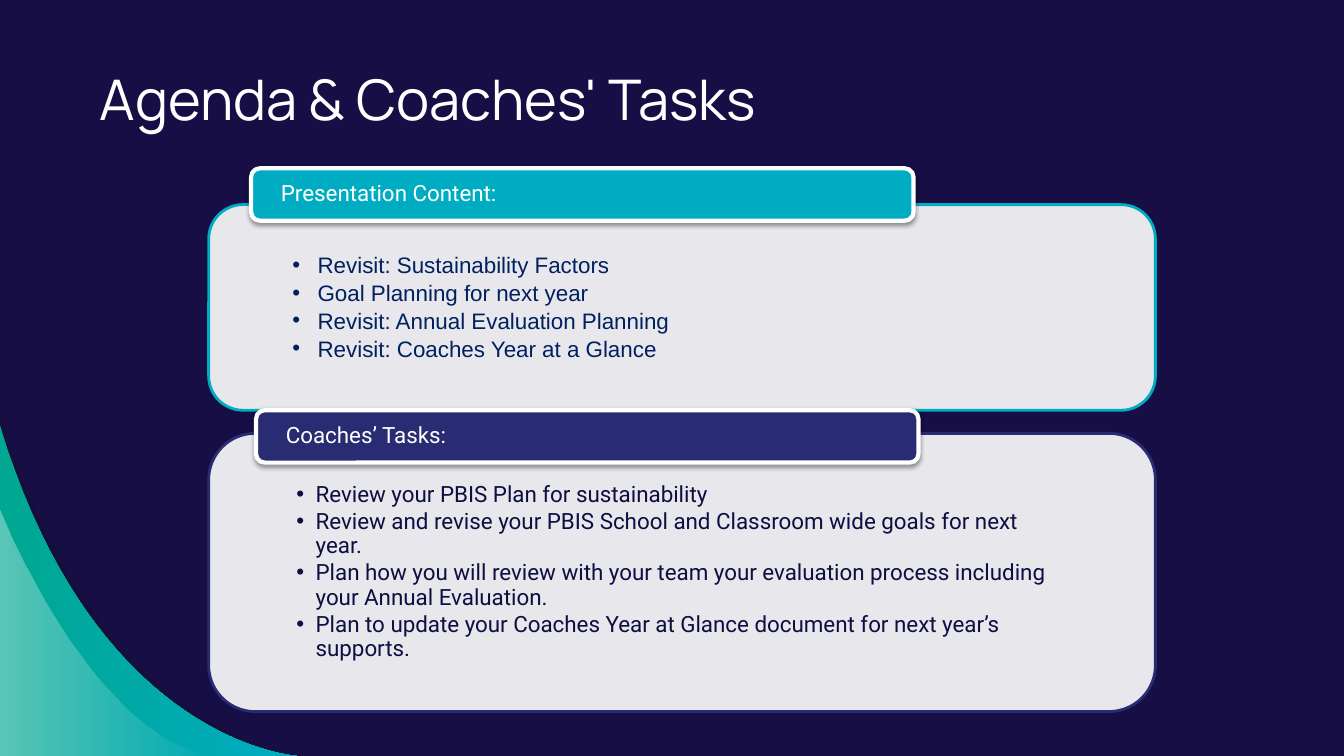
from dataclasses import dataclass

from lxml.etree import SubElement as Sub
from pptx import Presentation as Deck
from pptx.dml.color import RGBColor as Rgb
from pptx.enum.shapes import MSO_SHAPE as Kind
from pptx.enum.text import MSO_ANCHOR as Anchor, MSO_AUTO_SIZE as Fit, PP_ALIGN as Align
from pptx.oxml.ns import qn
from pptx.util import Inches, Pt


@dataclass(frozen=True)
class Theme:
    back: str = "160E44"
    white: str = "FFFFFF"
    teal: str = "00ACC2"
    green: str = "00A791"
    navy: str = "292C73"
    shade: str = "12102F"
    blue: str = "002060"
    ink: str = "0D0F41"
    black: str = "000000"
    head: str = "Manrope"
    text: str = "Roboto"
    plain: str = "Arial"
    large: int = 40
    small: int = 16
    edge: int = 2
    rim: int = 3


class Page:
    def __init__(self, deck, theme):
        self.theme = theme
        self.wide, self.high = deck.slide_width, deck.slide_height
        self.slide = deck.slides.add_slide(deck.slide_layouts[3])
        self.paint(self.slide.background.fill, theme.back)

    def x(self, share):
        return round(self.wide * share / 100)

    def y(self, share):
        return round(self.high * share / 100)

    def area(self, left, top, width, height):
        return self.x(left), self.y(top), self.x(width), self.y(height)

    def paint(self, fill, tone):
        fill.solid()
        fill.fore_color.rgb = Rgb.from_string(tone)

    def fade(self, shape, *parts):
        for tone, part in zip(shape.element.iter(qn("a:srgbClr")), parts):
            Sub(tone, qn("a:alpha"), val=str(part * 1000))

    def wave(self, start, bend, pull, end, tones, parts):
        spots = []
        for step in range(41):
            t = step / 40
            u = 1 - t
            mix = (u ** 3, 3 * u * u * t, 3 * u * t * t, t ** 3)
            pairs = list(zip(mix, (start, bend, pull, end)))
            spots.append((self.x(sum(m * p[0] for m, p in pairs)),
                          self.y(sum(m * p[1] for m, p in pairs))))
        curve = self.slide.shapes.build_freeform(*spots[0])
        curve.add_line_segments(spots[1:] + [(0, self.high)], close=True)
        shape = curve.convert_to_shape()
        shape.shadow.inherit = False
        if len(tones) == 1:
            self.paint(shape.fill, tones[0])
        else:
            shape.fill.gradient()
            shape.fill.gradient_angle = 0
            for stop, tone in zip(shape.fill.gradient_stops, tones):
                stop.color.rgb = Rgb.from_string(tone)
        self.fade(shape, *parts)
        shape.line.fill.background()

    def panel(self, area, tone, edge, width):
        shape = self.slide.shapes.add_shape(Kind.ROUNDED_RECTANGLE, *self.area(*area))
        shape.shadow.inherit = False
        self.paint(shape.fill, tone)
        shape.line.color.rgb = Rgb.from_string(edge)
        shape.line.width = Pt(width)
        return shape

    def card(self, area, edge):
        self.fade(self.panel(area, self.theme.white, edge, self.theme.edge), 90)

    def tab(self, area, tone, words):
        shape = self.panel(area, tone, self.theme.white, self.theme.rim)
        glow = shape.element.spPr.find(qn("a:effectLst"))
        cast = Sub(glow, qn("a:outerShdw"), blurRad=str(Pt(3.1)), dist=str(Pt(1.6)),
                   dir="5400000", rotWithShape="0")
        Sub(Sub(cast, qn("a:srgbClr"), val=self.theme.black), qn("a:alpha"), val="38000")
        frame = self.frame(shape, (0.27, 0, 0.27, 0), Anchor.MIDDLE)
        line = frame.paragraphs[0]
        line.line_spacing = 0.9
        self.add_words(line, words, self.theme.text, self.theme.small, self.theme.white)

    def frame(self, shape, inset, anchor):
        frame = shape.text_frame
        frame.word_wrap = True
        frame.auto_size = Fit.NONE
        frame.vertical_anchor = anchor
        (frame.margin_left, frame.margin_top,
         frame.margin_right, frame.margin_bottom) = map(Inches, inset)
        return frame

    def add_words(self, line, words, face, size, tone):
        line.alignment = Align.LEFT
        line.space_before = Pt(0)
        run = line.add_run()
        run.text = words
        run.font.name = face
        run.font.size = Pt(size)
        run.font.color.rgb = Rgb.from_string(tone)

    def place(self, index, area, inset, anchor):
        box = self.slide.placeholders[index]
        box.left, box.top, box.width, box.height = self.area(*area)
        box.element.getparent().append(box.element)
        return self.frame(box, inset, anchor)

    def title(self, area, words):
        frame = self.place(0, area, (0.1,) * 4, Anchor.MIDDLE)
        self.add_words(frame.paragraphs[0], words, self.theme.head,
                       self.theme.large, self.theme.white)

    def points(self, index, area, items, face, tone, indent, pitch, gap):
        frame = self.place(index, area, (0.73, 0.36, 0.73, 0.12), Anchor.TOP)
        for count, words in enumerate(items):
            line = frame.add_paragraph() if count else frame.paragraphs[0]
            form = line._p.get_or_add_pPr()
            form.set("marL", str(Inches(indent)))
            form.set("indent", str(-Inches(indent)))
            Sub(form, qn("a:buFont"), typeface=self.theme.plain)
            Sub(form, qn("a:buChar"), char="•")
            line.line_spacing = pitch
            line.space_after = Pt(gap)
            self.add_words(line, words, face, self.theme.small, tone)


def main():
    deck = Deck()
    deck.slide_width, deck.slide_height = Inches(13.33), Inches(7.5)
    theme = Theme()
    page = Page(deck, theme)

    page.wave((0, 55.07), (7.35, 98.53), (22.73, 100), (22.73, 100), [theme.shade], [54])
    page.wave((0, 56.27), (7.13, 98.53), (22.13, 100), (22.13, 100),
              [theme.green, theme.teal], [])
    page.wave((0, 67.47), (0, 67.47), (6.83, 98), (16.2, 100),
              [theme.white, theme.white], [36, 0])

    page.card((15.53, 27.07, 70.44, 27.2), theme.teal)
    page.points(1, (16.28, 28.4, 68.94, 24.53), [
        "Revisit: Sustainability Factors",
        "Goal Planning for next year",
        "Revisit: Annual Evaluation Planning",
        "Revisit: Coaches Year at a Glance",
    ], theme.plain, theme.blue, 0.25, 1.0, 0.8)
    page.tab((18.68, 22.27, 49.29, 6.93), theme.teal, "Presentation Content:")

    page.card((15.53, 57.33, 70.44, 36.8), theme.navy)
    page.points(2, (16.58, 59.07, 68.42, 33.2), [
        "Review your PBIS Plan for sustainability",
        "Review and revise your PBIS School and Classroom wide goals for next year.",
        "Plan how you will review with your team your evaluation process including "
        "your Annual Evaluation.",
        "Plan to update your Coaches Year at Glance document for next year’s supports.",
    ], theme.text, theme.ink, 0.19, 0.9, 2.2)
    page.tab((19.05, 54.27, 49.29, 6.93), theme.navy, "Coaches’ Tasks:")

    page.title((6.68, 6.8, 76.97, 12.27), "Agenda & Coaches' Tasks")
    deck.save("out.pptx")


if __name__ == "__main__":
    main()
